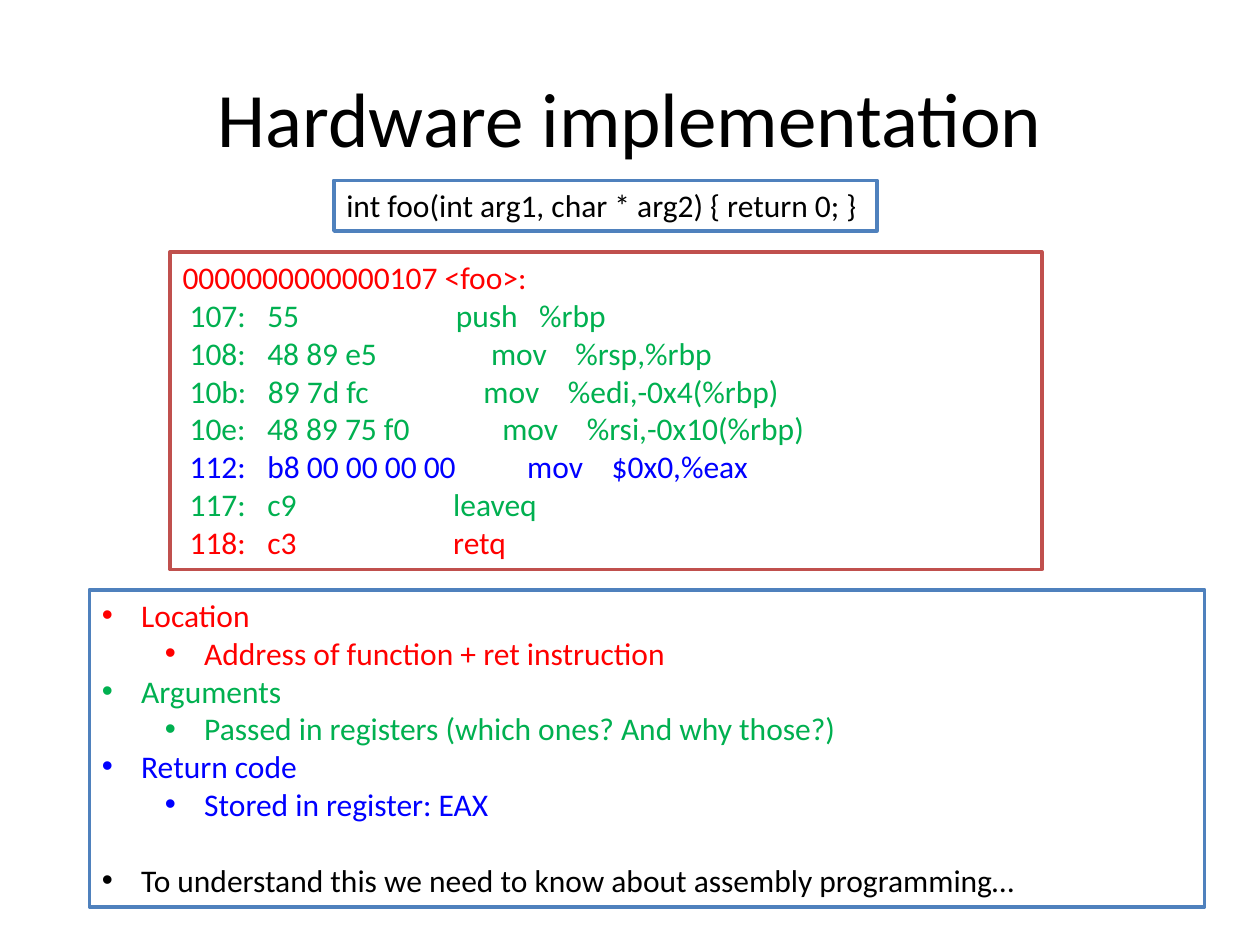
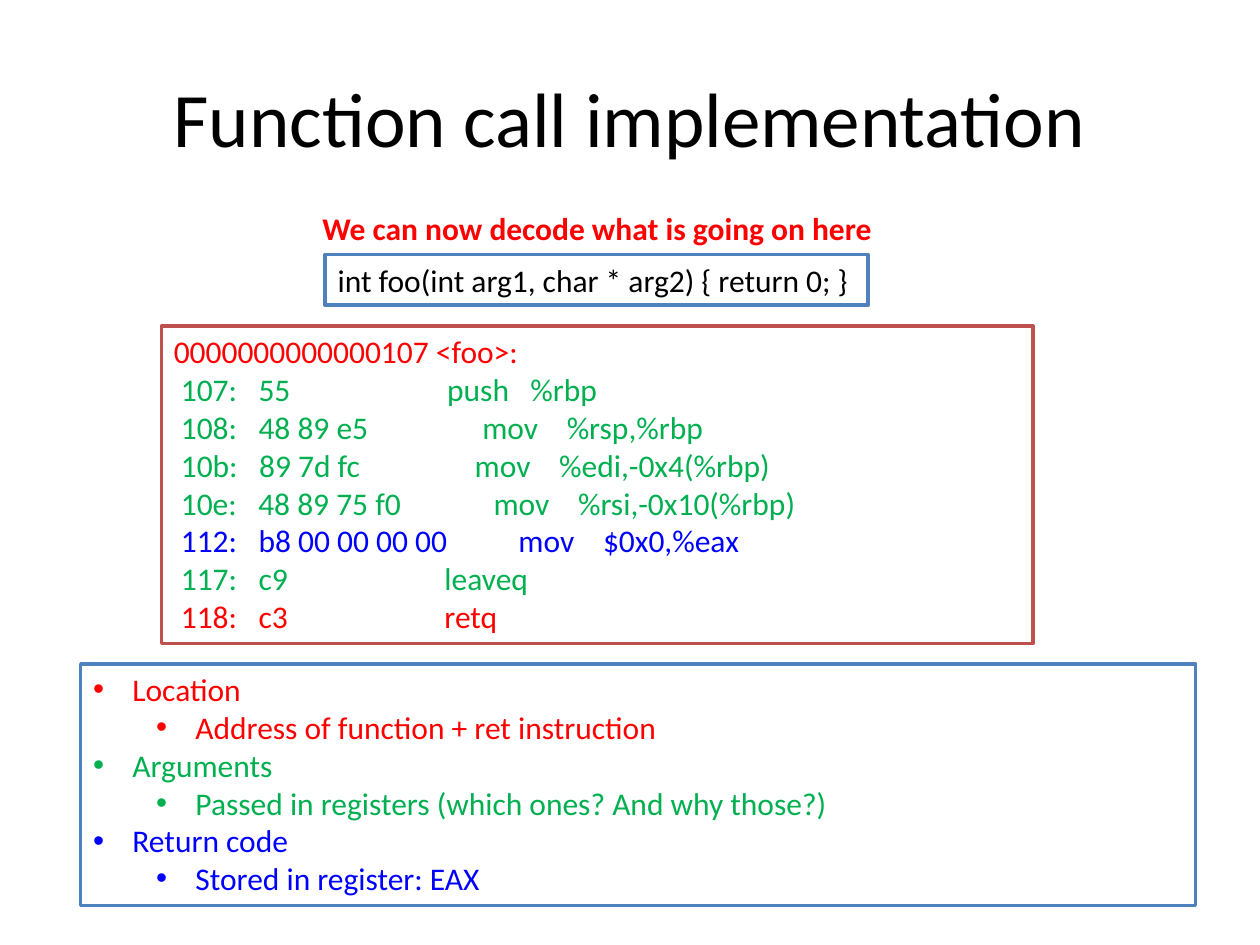
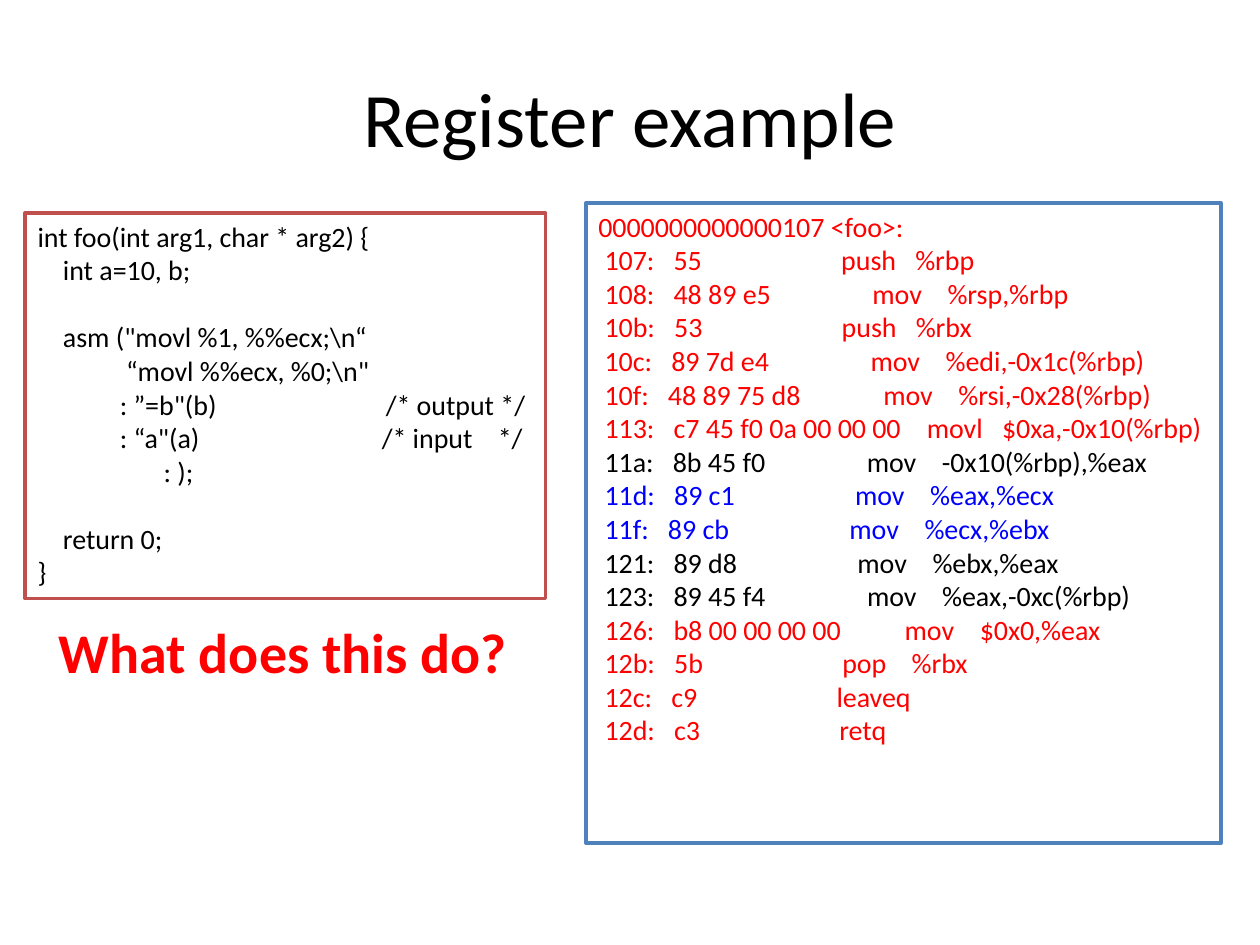
from lxml.etree import SubElement
from pptx import Presentation
from pptx.dml.color import RGBColor
from pptx.enum.shapes import MSO_SHAPE
from pptx.enum.text import MSO_ANCHOR, PP_ALIGN
from pptx.oxml.ns import qn
from pptx.util import Pt

BLACK, WHITE, RED, GREEN, BLUE = "000000", "FFFFFF", "FF0000", "00B050", "0000FF"
BRICK, STEEL = "C0504D", "4F81BD"

SPACE = 0.226
GLYPHS = {" ": SPACE, ":": 0.267, "a": 0.479, "b": 0.525, "c": 0.423, "d": 0.525,
          "e": 0.498, "f": 0.305, "h": 0.525, "l": 0.229, "m": 0.799, "o": 0.527,
          "p": 0.525, "s": 0.391, "u": 0.525, "v": 0.452}
DIGIT = 0.507

SIGNATURE = "int foo(int arg1, char * arg2) { return 0; }"
FOO_HEADER = "0000000000000107 <foo>:"

FOO_ASM = [
    ("107", "55", "push", "%rbp", GREEN),
    ("108", "48 89 e5", "mov", "%rsp,%rbp", GREEN),
    ("10b", "89 7d fc", "mov", "%edi,-0x4(%rbp)", GREEN),
    ("10e", "48 89 75 f0", "mov", "%rsi,-0x10(%rbp)", GREEN),
    ("112", "b8 00 00 00 00", "mov", "$0x0,%eax", BLUE),
    ("117", "c9", "leaveq", "", GREEN),
    ("118", "c3", "retq", "", RED),
]

REGISTER_ASM = [
    ("107", "55", "push", "%rbp", RED),
    ("108", "48 89 e5", "mov", "%rsp,%rbp", RED),
    ("10b", "53", "push", "%rbx", RED),
    ("10c", "89 7d e4", "mov", "%edi,-0x1c(%rbp)", RED),
    ("10f", "48 89 75 d8", "mov", "%rsi,-0x28(%rbp)", RED),
    ("113", "c7 45 f0 0a 00 00 00", "movl", "$0xa,-0x10(%rbp)", RED),
    ("11a", "8b 45 f0", "mov", "-0x10(%rbp),%eax", BLACK),
    ("11d", "89 c1", "mov", "%eax,%ecx", BLUE),
    ("11f", "89 cb", "mov", "%ecx,%ebx", BLUE),
    ("121", "89 d8", "mov", "%ebx,%eax", BLACK),
    ("123", "89 45 f4", "mov", "%eax,-0xc(%rbp)", BLACK),
    ("126", "b8 00 00 00 00", "mov", "$0x0,%eax", RED),
    ("12b", "5b", "pop", "%rbx", RED),
    ("12c", "c9", "leaveq", "", RED),
    ("12d", "c3", "retq", "", RED),
]

NOTES = [
    ("Location", 0, RED, 0),
    ("Address of function + ret instruction", 1, RED, 0),
    ("Arguments", 0, GREEN, 0),
    ("Passed in registers (which ones? And why those?)", 1, GREEN, 0),
    ("Return code", 0, BLUE, 0),
    ("Stored in register: EAX", 1, BLUE, 0),
]
CLOSING_NOTE = ("To understand this we need to know about assembly programming…", 0, BLACK, 21.6)

C_SOURCE = [
    ("int foo(int arg1, char * arg2) {", (), 0),
    ("\tint a=10, b;", (14.5,), 0),
    ("\tasm (\"movl %1, %%ecx;\\n“", (14.5,), 19.2),
    ("\t“movl %%ecx, %0;\\n\"", (50.6,), 0),
    ("\t: ”=b\"(b)\t/* output */", (47, 199), 0),
    ("\t: “a\"(a)\t/* input\t*/", (47, 196.7, 263), 0),
    ("\t: );", (72,), 0),
    ("\treturn 0;", (14.5,), 19.2),
    ("}", (), 0),
]


def rgb(color):
    return RGBColor.from_string(color)


def width(text, size):
    return size * sum(GLYPHS.get(c, DIGIT) for c in text)


def add_text(tf, text, size=18, color=BLACK, bold=False, align=PP_ALIGN.LEFT,
             before=0, level=None, tabs=()):
    p = tf.paragraphs[0]
    if p.runs:
        p = tf.add_paragraph()
    p.alignment = align
    p.space_before = Pt(before)
    r = p.add_run()
    r.text = text
    r.font.name, r.font.size, r.font.bold = "Calibri", Pt(size), bold
    r.font.color.rgb = rgb(color)
    pPr = p._p.get_or_add_pPr()
    if level is not None:
        p.level = level
        pPr.set("marL", str(Pt(22.5 + 36 * level)))
        pPr.set("indent", str(Pt(-22.5)))
        SubElement(pPr, qn("a:buFont"), typeface="Arial")
        SubElement(pPr, qn("a:buChar"), char="•")
    if tabs:
        tab_list = SubElement(pPr, qn("a:tabLst"))
        for x in tabs:
            SubElement(tab_list, qn("a:tab"), pos=str(Pt(x)), algn="l")


class Deck:
    def __init__(self):
        self.prs = Presentation()
        self.prs.slide_width, self.prs.slide_height = Pt(720), Pt(540)

    def slide(self, title):
        self.s = self.prs.slides.add_slide(self.prs.slide_layouts[6])
        self.label(title, 36, 21.6, 648, 90, size=44, align=PP_ALIGN.CENTER)

    def label(self, text, x, y, w, h, **fmt):
        tf = self.s.shapes.add_textbox(Pt(x), Pt(y), Pt(w), Pt(h)).text_frame
        tf.word_wrap = True
        tf.vertical_anchor = MSO_ANCHOR.MIDDLE
        add_text(tf, text, **fmt)

    def box(self, x, y, w, h, line):
        sp = self.s.shapes.add_shape(MSO_SHAPE.RECTANGLE, Pt(x), Pt(y), Pt(w), Pt(h))
        sp.shadow.inherit = False
        sp.fill.solid()
        sp.fill.fore_color.rgb = rgb(WHITE)
        sp.line.color.rgb = rgb(line)
        sp.line.width = Pt(2)
        tf = sp.text_frame
        tf.word_wrap = True
        tf.vertical_anchor = MSO_ANCHOR.TOP
        return tf

    def assembly(self, rows, x, y, w, h, line, size):
        tf = self.box(x, y, w, h, line)
        add_text(tf, FOO_HEADER, size=size, color=RED)
        for address, code, op, operands, color in rows:
            start = f" {address}:"
            code_x = width(start + " " * 3, size)
            op_x = code_x + width(code.ljust(24), size)
            tabs = [code_x, op_x]
            cells = [start, code, op]
            if operands:
                tabs.append(op_x + width(op.ljust(7), size))
                cells.append(operands)
            add_text(tf, "\t".join(cells), size=size, color=color, tabs=tabs)

    def bullets(self, notes, x, y, w, h):
        tf = self.box(x, y, w, h, STEEL)
        for text, level, color, before in notes:
            add_text(tf, text, color=color, level=level, before=before)

    def source(self, lines, x, y, w, h):
        tf = self.box(x, y, w, h, BRICK)
        for text, tabs, before in lines:
            add_text(tf, text, size=16, tabs=tabs, before=before)

    def foo_panels(self, x, y, notes, notes_h):
        self.assembly(FOO_ASM, x + 46.1, y + 41, 498.2, 181.4, BRICK, 18)
        self.bullets(notes, x, y + 234, 637.2, notes_h)
        add_text(self.box(x + 139.7, y, 310.3, 29, STEEL), SIGNATURE)


def main():
    d = Deck()

    d.slide("Hardware implementation")
    d.foo_panels(51.1, 103, NOTES + [CLOSING_NOTE], 181.4)

    d.slide("Function call implementation")
    d.foo_panels(46.1, 145.4, NOTES, 138.2)
    d.label("We can now decode what is going on here", 161.3, 116, 360, 29,
            color=RED, bold=True, align=PP_ALIGN.CENTER)

    d.slide("Register example")
    d.source(C_SOURCE, 14.4, 121.7, 297.4, 220.3)
    d.label("What does this do?", 26.6, 349.2, 272.9, 46, size=32, color=RED, bold=True)
    d.assembly(REGISTER_ASM, 334.8, 116, 362.9, 365.8, STEEL, 16)

    d.prs.save("out.pptx")


if __name__ == "__main__":
    main()
